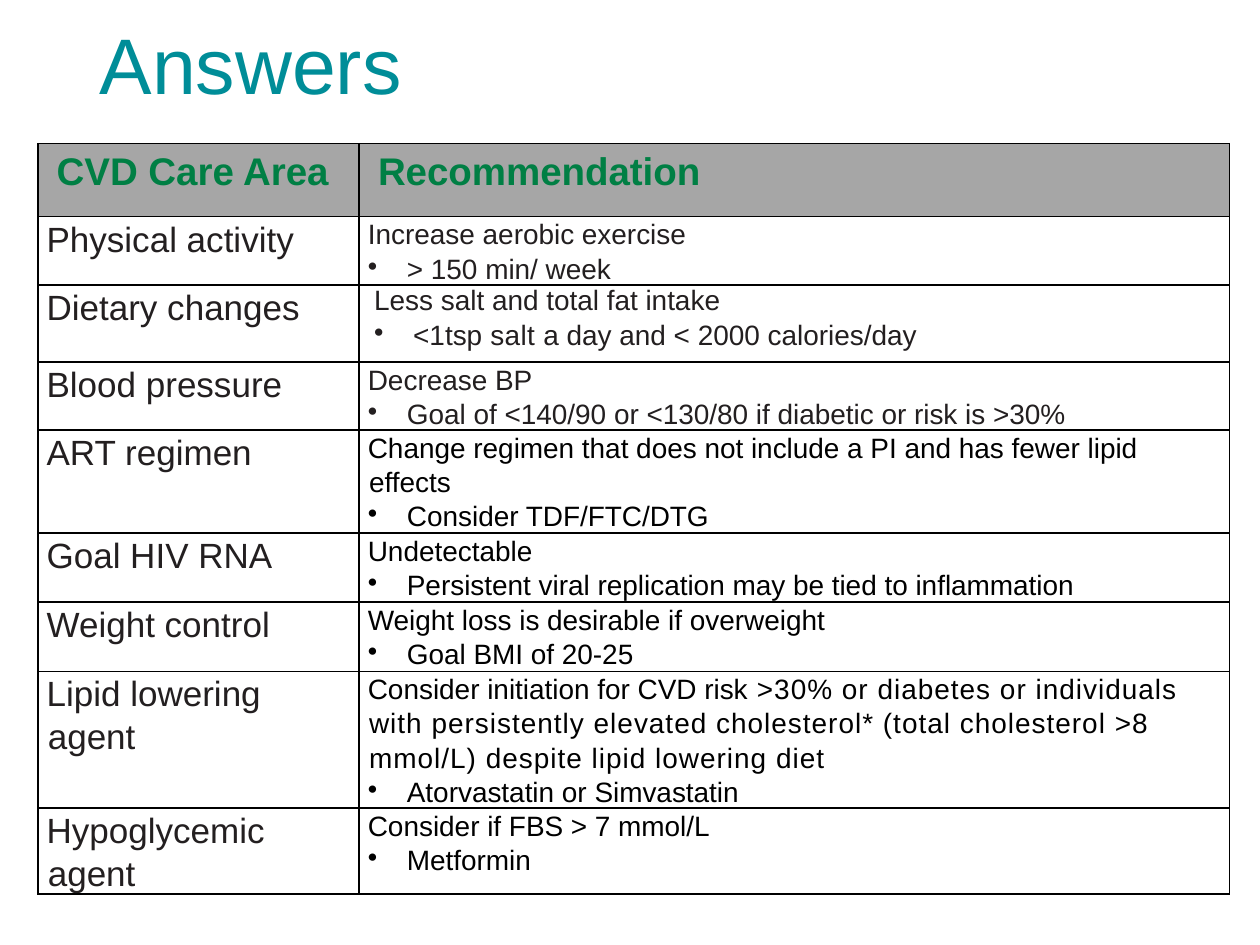
"""Build the slide of answers on cardiovascular care recommendations."""
from dataclasses import dataclass

from pptx import Presentation
from pptx.dml.color import RGBColor
from pptx.enum.text import MSO_ANCHOR, PP_ALIGN
from pptx.oxml.xmlchemy import OxmlElement
from pptx.util import Pt

FONT = "Arial"
COLORS = {
    "title": "008D98",
    "heading": "007F44",
    "header_fill": "A6A6A6",
    "charcoal": "231F20",
    "black": "000000",
}
COLUMN_WIDTHS = (183.6, 497.5)
HEADINGS = ("CVD Care Area", "Recommendation")
HEADER_HEIGHT = 41.8
HANGING = 22.3


@dataclass(frozen=True)
class Span:
    """A piece of text with its letter spacing in points."""

    text: str
    spacing: float = 0


@dataclass(frozen=True)
class TextStyle:
    """The look of a paragraph, with lengths in points."""

    size: float
    color: str
    bold: bool = False
    margin: float = 0.72
    indent: float = -0.72
    line_spacing: float = 1.1
    space_before: float = 0
    bullet: bool = False


@dataclass(frozen=True)
class CareArea:
    """A body row: the area, its recommendation and the action to take."""

    name: str
    summary: tuple[Span, ...]
    action: tuple[Span, ...]
    height: float
    color: str = "black"
    margin: float = 0.72
    indent: float = -0.72
    line_spacing: float = 1.1
    space_before: float = 0


CARE_AREAS = (
    CareArea("Physical activity", (Span("Increase aerobic exercise"),),
             (Span("> 150 min/ week"),), 38.9, "charcoal"),
    CareArea("Dietary changes", (Span("Less salt and total fat intake"),),
             (Span("<1tsp"), Span(" salt ", 0.2), Span("a day and < 2000 calories/day")),
             43.9, "charcoal", margin=3.6, indent=0, line_spacing=1, space_before=2.2),
    CareArea("Blood pressure", (Span("Decrease BP"),),
             (Span("Goal of <140/90 or <130/80 if diabetic or risk is >30%"),),
             38.9, "charcoal"),
    CareArea("ART regimen",
             (Span("Change regimen that does not include a PI and has fewer lipid effects"),),
             (Span("Consider TDF/FTC/DTG"),), 58.6),
    CareArea("Goal HIV RNA", (Span("Undetectable"),),
             (Span("Persistent viral replication may be tied to inflammation"),), 39.6),
    CareArea("Weight control", (Span("Weight loss is desirable if overweight"),),
             (Span("Goal BMI of 20-25"),), 39.6),
    CareArea("Lipid lowering agent",
             (Span("Consider initiation for CVD risk"),
              Span(" >30% or diabetes or individuals with persistently elevated cholesterol* "
                   "(total cholesterol >8 mmol/L) despite lipid lowering diet", 0.6)),
             (Span("Atorvastatin or Simvastatin"),), 77.8),
    CareArea("Hypoglycemic agent", (Span("Consider if FBS > 7 mmol/L"),),
             (Span("Metformin"),), 49),
)


def rgb(name: str) -> RGBColor:
    """Return a named colour."""
    return RGBColor.from_string(COLORS[name])


def set_values(target, values: dict) -> None:
    """Set each attribute of the target from a dict."""
    for name, value in values.items():
        setattr(target, name, value)


def write_paragraph(paragraph, spans: tuple[Span, ...], style: TextStyle) -> None:
    """Format a paragraph and fill it with spans."""
    properties = paragraph._p.get_or_add_pPr()
    properties.set("marL", str(Pt(style.margin)))
    properties.set("indent", str(Pt(style.indent)))
    bullet = OxmlElement("a:buChar" if style.bullet else "a:buNone")
    if style.bullet:
        bullet.set("char", "•")
    properties.append(bullet)
    set_values(paragraph, {
        "alignment": PP_ALIGN.LEFT,
        "line_spacing": style.line_spacing,
        "space_before": Pt(style.space_before),
    })
    for span in spans:
        run = paragraph.add_run()
        run.text = span.text
        set_values(run.font, {"name": FONT, "size": Pt(style.size), "bold": style.bold})
        run.font.color.rgb = rgb(style.color)
        if span.spacing:
            run._r.get_or_add_rPr().set("spc", str(round(span.spacing * 100)))


def add_borders(cell) -> None:
    """Draw a thin black line on every side of a cell."""
    properties = cell._tc.get_or_add_tcPr()
    for position, side in enumerate(("lnL", "lnR", "lnT", "lnB")):
        line = OxmlElement(f"a:{side}")
        line.set("w", str(Pt(1)))
        fill = OxmlElement("a:solidFill")
        color = OxmlElement("a:srgbClr")
        color.set("val", COLORS["black"])
        fill.append(color)
        line.append(fill)
        properties.insert(position, line)


def format_cell(cell, side_margin: float, top_margin: float = 0) -> None:
    """Set the margins, anchor and borders of a cell."""
    set_values(cell, {
        "margin_left": Pt(side_margin),
        "margin_right": Pt(side_margin),
        "margin_top": Pt(top_margin),
        "margin_bottom": Pt(0),
        "vertical_anchor": MSO_ANCHOR.TOP,
    })
    add_borders(cell)


def fill_heading(cell, text: str) -> None:
    """Write a header cell."""
    format_cell(cell, 10.8, 1.44)
    cell.fill.solid()
    cell.fill.fore_color.rgb = rgb("header_fill")
    write_paragraph(cell.text_frame.paragraphs[0], (Span(text),),
                    TextStyle(22, "heading", bold=True))


def fill_care_area(cells, area: CareArea) -> None:
    """Write the two cells of a body row."""
    for cell in cells:
        format_cell(cell, 5.04)
        cell.fill.background()
    name_frame, advice_frame = (cell.text_frame for cell in cells)
    write_paragraph(name_frame.paragraphs[0], (Span(area.name),), TextStyle(20, "charcoal"))
    write_paragraph(advice_frame.paragraphs[0], area.summary,
                    TextStyle(16, area.color, margin=area.margin, indent=area.indent,
                              line_spacing=area.line_spacing))
    action_margin = HANGING + area.margin + area.indent
    write_paragraph(advice_frame.add_paragraph(), area.action,
                    TextStyle(16, area.color, margin=action_margin, indent=-HANGING,
                              line_spacing=area.line_spacing,
                              space_before=area.space_before, bullet=True))


def add_care_table(slide) -> None:
    """Add the table of care areas and recommendations."""
    heights = (HEADER_HEIGHT, *(area.height for area in CARE_AREAS))
    table = slide.shapes.add_table(len(heights), len(COLUMN_WIDTHS), Pt(21.6), Pt(82),
                                   Pt(sum(COLUMN_WIDTHS)), Pt(sum(heights))).table
    set_values(table, {"first_row": False, "horz_banding": False})
    for column, width in zip(table.columns, COLUMN_WIDTHS):
        column.width = Pt(width)
    for row, height in zip(table.rows, heights):
        row.height = Pt(height)
    for column, heading in enumerate(HEADINGS):
        fill_heading(table.cell(0, column), heading)
    for row, area in enumerate(CARE_AREAS, start=1):
        fill_care_area(tuple(table.rows[row].cells), area)


def main() -> None:
    """Build and save the presentation."""
    presentation = Presentation()
    set_values(presentation, {"slide_width": Pt(720), "slide_height": Pt(540)})
    slide = presentation.slides.add_slide(presentation.slide_layouts[5])
    title = slide.shapes.title
    set_values(title, {"left": Pt(49.7), "top": Pt(11.5), "width": Pt(620.6), "height": Pt(118.8)})
    title.text_frame.vertical_anchor = MSO_ANCHOR.TOP
    write_paragraph(title.text_frame.paragraphs[0], (Span("Answers"),),
                    TextStyle(45, "title", margin=0, indent=0, line_spacing=0.9))
    add_care_table(slide)
    presentation.save("out.pptx")


if __name__ == "__main__":
    main()
